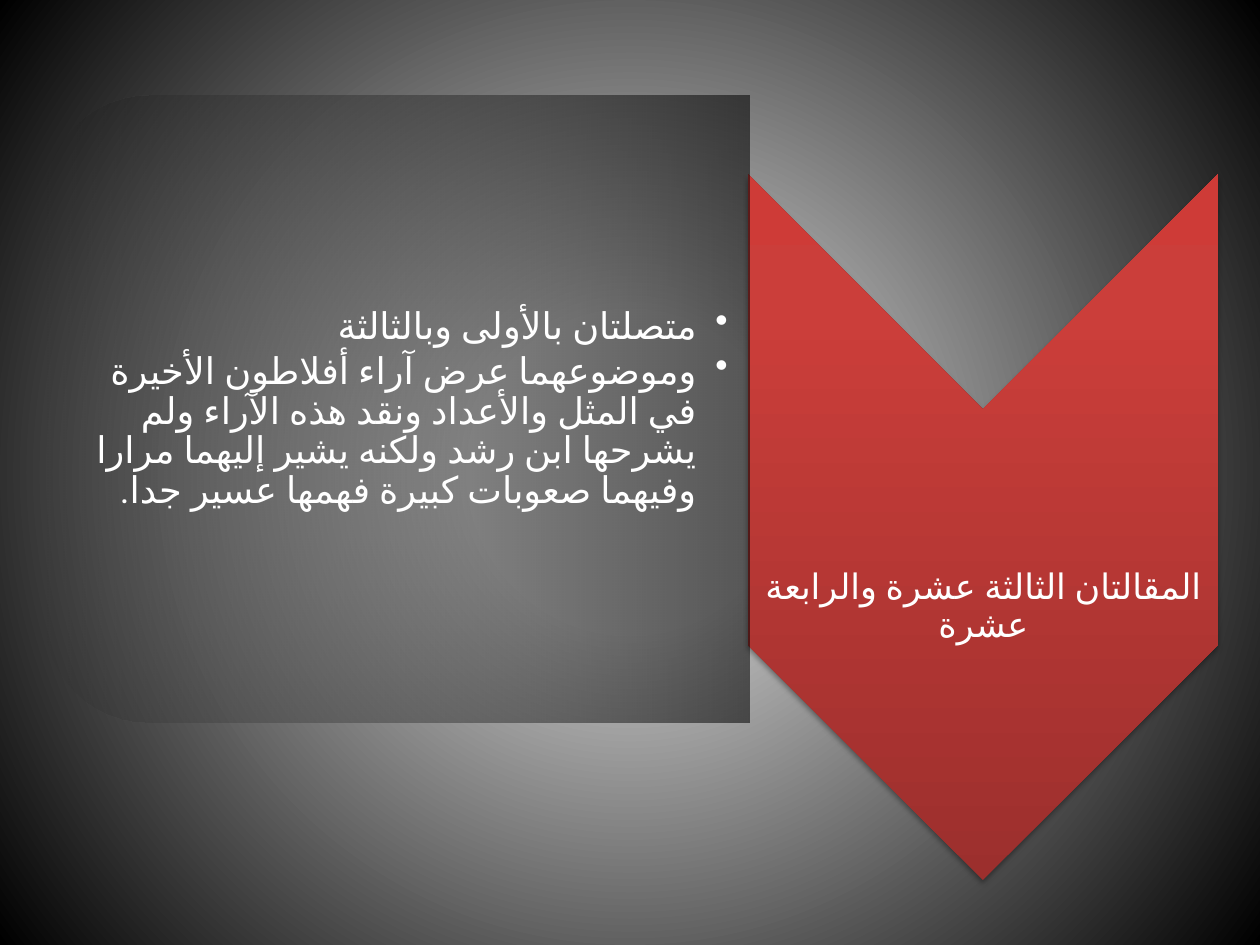
from pptx import Presentation
from pptx.dml.color import RGBColor as RGB
from pptx.enum.lang import MSO_LANGUAGE_ID as Lang
from pptx.enum.shapes import MSO_SHAPE as Kind
from pptx.enum.text import MSO_ANCHOR as Anchor, PP_ALIGN as Align
from pptx.oxml.ns import qn
from pptx.util import Inches, Pt
from lxml.etree import SubElement as Sub

WHITE = RGB(0xFF, 0xFF, 0xFF)
SILVER = RGB(0xBF, 0xBF, 0xBF)
BLACK = RGB(0, 0, 0)
MAROON = RGB(0x9C, 0x2F, 0x2D)
RED = RGB(0xCB, 0x3E, 0x3A)
BRIGHT = RGB(0xCE, 0x3B, 0x37)

TITLE = "المقالتان الثالثة عشرة والرابعة عشرة"
POINTS = [
    "متصلتان بالأولى وبالثالثة",
    "وموضوعهما عرض آراء أفلاطون الأخيرة في المثل والأعداد ونقد هذه الآراء "
    "ولم يشرحها ابن رشد ولكنه يشير إليهما مرارا وفيهما صعوبات كبيرة فهمها عسير جدا.",
]


def tint(node, color, alpha):
    clr = Sub(node, qn("a:srgbClr"), val=str(color))
    if alpha < 100:
        Sub(clr, qn("a:alpha"), val=str(alpha * 1000))


def blend(fill, root, stops, angle=None, turn=True):
    """Fill with (place, colour, opacity) stops; without an angle, from the centre out."""
    fill.gradient()
    grad = next(root.iter(qn("a:gradFill")))
    for old in list(grad):
        grad.remove(old)
    grad.set("rotWithShape", str(int(turn)))
    row = Sub(grad, qn("a:gsLst"))
    for place, color, alpha in stops:
        tint(Sub(row, qn("a:gs"), pos=str(place * 1000)), color, alpha)
    if angle is None:
        path = Sub(grad, qn("a:path"), path="circle")
        Sub(path, qn("a:fillToRect"), dict.fromkeys("ltrb", "50000"))
    else:
        Sub(grad, qn("a:lin"), ang=str(angle * 60000), scaled="0")


class Deck:
    """Style and current slide; boxes are left, top, width, height in percent."""
    font = "Roboto"
    color = WHITE

    def __init__(self):
        self.prs = Presentation()
        self.prs.slide_width, self.prs.slide_height = Inches(10), Inches(7.5)
        self.slide = self.prs.slides.add_slide(self.prs.slide_layouts[6])

    def place(self, box):
        sides = (self.prs.slide_width, self.prs.slide_height) * 2
        return [round(side * part / 100) for side, part in zip(sides, box)]

    def back(self, stops):
        blend(self.slide.background.fill, self.slide.element, stops)

    def shape(self, kind, box, turn, stops, angle, follow):
        item = self.slide.shapes.add_shape(kind, *self.place(box))
        item.rotation = turn
        item.line.fill.background()
        item.shadow.inherit = False
        blend(item.fill, item.element, stops, angle, follow)
        return item

    def shade(self, item):
        """Cast a soft shadow straight down."""
        glow = Sub(item.element.spPr.find(qn("a:effectLst")), qn("a:outerShdw"),
                   blurRad=str(Pt(3.1)), dist=str(Pt(1.8)),
                   dir="5400000", rotWithShape="0")
        tint(glow, BLACK, 35)

    def text(self, box, lines, size, align, anchor, pads, gap, dots=False):
        """Right-to-left text; gap is the space after, in percent of a line."""
        frame = self.slide.shapes.add_textbox(*self.place(box)).text_frame
        frame.word_wrap = True
        frame.vertical_anchor = anchor
        (frame.margin_left, frame.margin_top,
         frame.margin_right, frame.margin_bottom) = map(Inches, pads)
        for i, line in enumerate(lines):
            para = frame.add_paragraph() if i else frame.paragraphs[0]
            para.alignment = align
            para.line_spacing = 0.9
            props = para._p.get_or_add_pPr()
            props.set("rtl", "1")
            Sub(Sub(props, qn("a:spcAft")), qn("a:spcPct"), val=str(gap * 1000))
            if dots:
                para.level = 1
                props.set("marL", str(Inches(0.25)))
                props.set("indent", str(-Inches(0.25)))
                Sub(props, qn("a:buChar"), char="•")
            run = para.add_run()
            run.text = line
            run.font.size = Pt(size)
            run.font.name = self.font
            run.font.color.rgb = self.color
            run.font.language_id = Lang.ARABIC
            Sub(run.font._element, qn("a:cs"), typeface=self.font)


def main():
    deck = Deck()
    deck.back([(20, SILVER, 100), (100, BLACK, 100)])
    arrow = deck.shape(Kind.CHEVRON, (50, 30.93, 56, 49.73), 90,
                       [(0, MAROON, 100), (80, RED, 100), (100, BRIGHT, 100)],
                       270, False)
    deck.shade(arrow)
    deck.text((59.4, 43.2, 37.3, 25.07), [TITLE], 20, Align.CENTER,
              Anchor.BOTTOM, (0, 0.6, 0, 0), 35)
    deck.shape(Kind.ROUND_2_SAME_RECTANGLE, (6.6, 6, 49.8, 74.53), 270,
               [(0, BLACK, 0), (100, BLACK, 55)], 90, True)
    deck.text((6, 13.33, 53.4, 60), POINTS, 21, Align.RIGHT,
              Anchor.MIDDLE, (0.01, 0.01, 0.16, 0.01), 15, dots=True)
    deck.prs.save("out.pptx")


if __name__ == "__main__":
    main()
